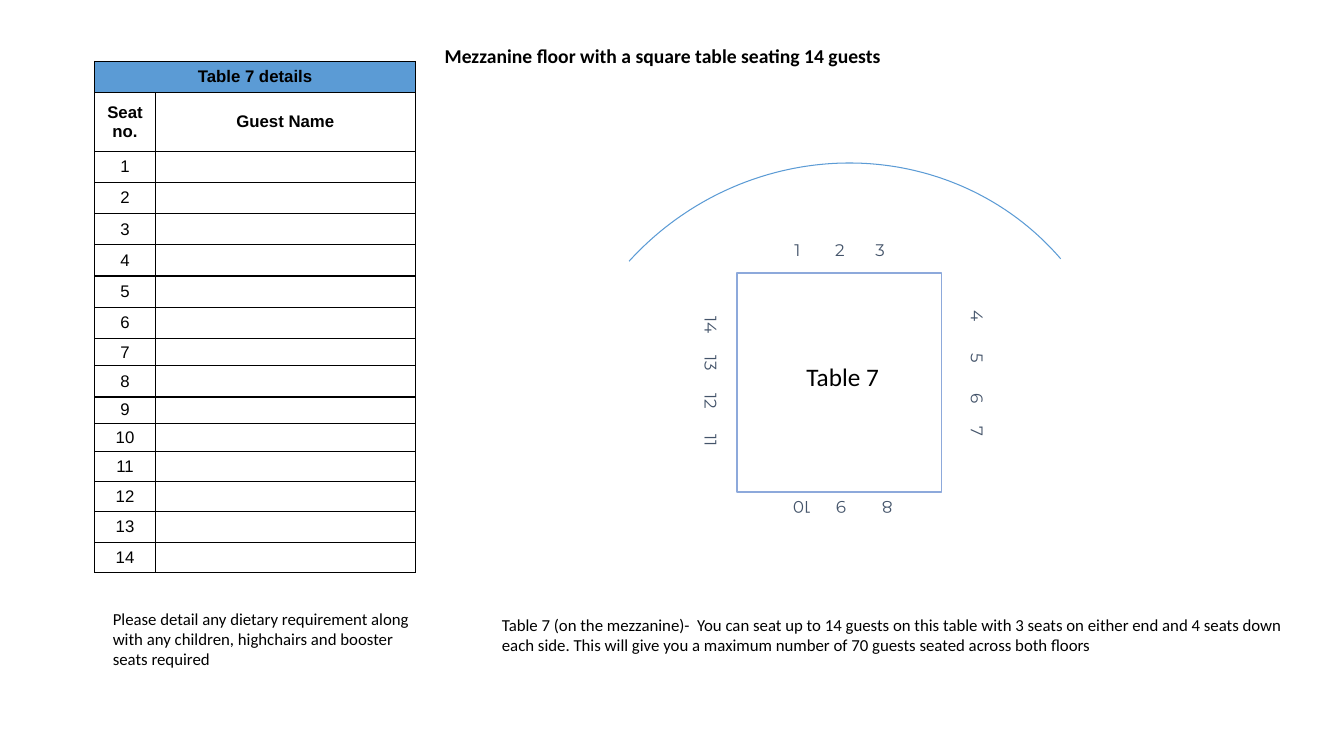
from lxml import etree
from pptx import Presentation
from pptx.dml.color import RGBColor
from pptx.enum.shapes import MSO_SHAPE
from pptx.enum.text import MSO_ANCHOR, PP_ALIGN
from pptx.oxml.ns import qn
from pptx.util import Inches, Pt

ARC, RECTANGLE = MSO_SHAPE.ARC, MSO_SHAPE.RECTANGLE
LEFT, CENTER = PP_ALIGN.LEFT, PP_ALIGN.CENTER
TOP, MIDDLE = MSO_ANCHOR.TOP, MSO_ANCHOR.MIDDLE
TITLE_ONLY = 5
COLUMNS, ROWS = 133.3, 75
COLORS = {"text": "000000", "seat": "44546A", "accent": "5B9BD5",
          "outline": "8DA9DB", "paper": "FFFFFF", "border": "000000"}
SEAT_COUNT = 14
ROW_HEIGHTS = [3.1, 5.8] + [3.1] * 6 + [2.7, 3.1, 2.6, 2.8] + [3] * 4
SEAT_STRIPS = [
    ((71.4, 23.3, 23.4, 2.9), 0, {1: 7.7, 2: 11.9, 3: 15.9}),
    ((85.4, 35.1, 23.1, 5.7), 90, {4: 5, 5: 9.1, 6: 13.1, 7: 16.4}),
    ((71.4, 49, 23.4, 2.9), 180, {8: 6.8, 9: 11.4, 10: 15.3}),
    ((60.3, 35.7, 20.5, 4.6), 90, {14: 4.5, 13: 8.3, 12: 12.1, 11: 16}),
]


def grid(cells):
    return Inches(round(cells / 10, 3))


def color(name):
    return RGBColor.from_string(COLORS[name])


def write(frame, text, size=12, font="Calibri", ink="text", bold=False, align=LEFT):
    para = frame.paragraphs[0]
    para.alignment = align
    if not text:
        etree.SubElement(para._p, qn("a:endParaRPr"), sz=str(size * 100))
        return para
    span = para.add_run()
    span.text = text
    span.font.size = Pt(size)
    span.font.name = font
    span.font.bold = bold
    span.font.color.rgb = color(ink)
    return para


class Page:
    def __init__(self, deck):
        self.slide = deck.slides.add_slide(deck.slide_layouts[TITLE_ONLY])
        self.shapes = self.slide.shapes

    def frame(self, box, margins=(1, 0.5), anchor=TOP):
        frame = box.text_frame
        frame.word_wrap = True
        frame.vertical_anchor = anchor
        frame.margin_left = frame.margin_right = grid(margins[0])
        frame.margin_top = frame.margin_bottom = grid(margins[1])
        return frame

    def title(self, text, place, **style):
        box = self.shapes.title
        box.left, box.top, box.width, box.height = map(grid, place)
        write(self.frame(box), text, **style)

    def label(self, text, place, **style):
        box = self.shapes.add_textbox(*map(grid, place))
        write(self.frame(box), text, **style)

    def shape(self, kind, place, rotation=0, fill=None, line=None, width=1):
        box = self.shapes.add_shape(kind, *map(grid, place))
        box.shadow.inherit = False
        box.rotation = rotation
        if fill:
            box.fill.solid()
            box.fill.fore_color.rgb = color(fill)
        else:
            box.fill.background()
        if line:
            box.line.color.rgb = color(line)
            box.line.width = Pt(width)
        else:
            box.line.fill.background()
        return box

    def seats(self, place, rotation, stops):
        box = self.shape(RECTANGLE, place, rotation, fill="paper")
        frame = self.frame(box, (0, 0), MIDDLE)
        text = "".join(f"\t{seat}" for seat in stops)
        para = write(frame, text, font="Montserrat", ink="seat")
        tabs = etree.SubElement(para._p.get_or_add_pPr(), qn("a:tabLst"))
        for position in stops.values():
            etree.SubElement(tabs, qn("a:tab"), pos=str(grid(position)), algn="ctr")

    def cell(self, cell, text, fill=None, bold=False):
        cell.margin_left = cell.margin_right = 0
        cell.margin_top = cell.margin_bottom = 0
        cell.vertical_anchor = MIDDLE
        write(cell.text_frame, text, font="Arial", bold=bold, align=CENTER)
        properties = cell._tc.get_or_add_tcPr()
        for side in ("lnL", "lnR", "lnT", "lnB"):
            line = etree.SubElement(properties, qn(f"a:{side}"), w=str(Pt(1)))
            paint = etree.SubElement(line, qn("a:solidFill"))
            etree.SubElement(paint, qn("a:srgbClr"), val=COLORS["border"])
        if fill:
            cell.fill.solid()
            cell.fill.fore_color.rgb = color(fill)
        else:
            cell.fill.background()

    def table(self, rows, place, widths, heights):
        table = self.shapes.add_table(len(rows), len(widths), *map(grid, place)).table
        table.first_row = table.horz_banding = False
        for column, width in zip(table.columns, widths):
            column.width = grid(width)
        for row, height in zip(table.rows, heights):
            row.height = grid(height)
        for index, texts in enumerate(rows):
            for cell, text in zip(table.rows[index].cells, texts):
                self.cell(cell, text, "accent" if index == 0 else None, index < 2)
        table.cell(0, 0).merge(table.cell(0, len(widths) - 1))


def main():
    deck = Presentation()
    deck.slide_width, deck.slide_height = grid(COLUMNS), grid(ROWS)
    page = Page(deck)
    page.title("Mezzanine floor with a square table seating 14 guests",
               (43.1, 3.9, 50.4, 3.4), size=14, bold=True)

    balcony = page.shape(ARC, (54.3, 16.6, 57.9, 55.9), 319.3, line="accent", width=0.75)
    balcony.adjustments[0] = 157.49
    balcony.adjustments[1] = 0
    page.shape(RECTANGLE, (72.4, 27.8, 21.7, 20.3), 90, line="outline")
    for place, rotation, stops in SEAT_STRIPS:
        page.seats(place, rotation, stops)
    page.label("Table 7", (79, 35.4, 9.9, 4), size=18)

    guests = [("Table 7 details", ""), ("Seat no.", "Guest Name")]
    guests += [(str(seat), "") for seat in range(1, SEAT_COUNT + 1)]
    page.table(guests, (9.4, 6.1, 31.8, sum(ROW_HEIGHTS)), (6, 25.8), ROW_HEIGHTS)

    page.label("Please detail any dietary requirement along with any children, "
               "highchairs and booster seats required", (10.2, 59.9, 31.8, 9.4))
    page.label("Table 7 (on the mezzanine)-  You can seat up to 14 guests on this table "
               "with 3 seats on either end and 4 seats down each side. This will give you "
               "a maximum number of 70 guests seated across both floors",
               (48.8, 60.5, 79.7, 5))
    deck.save("out.pptx")


if __name__ == "__main__":
    main()
